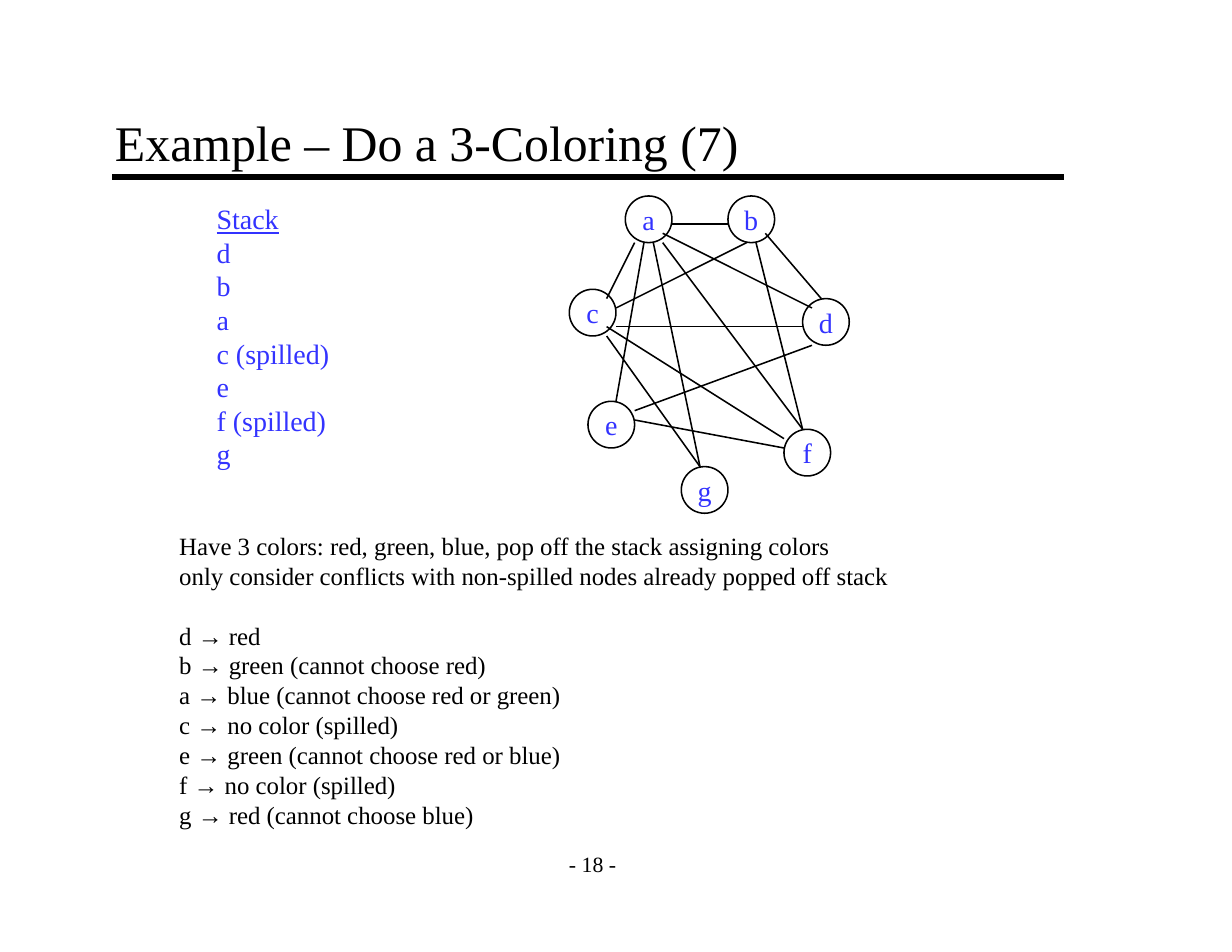
from lxml import etree
from pptx import Presentation
from pptx import util as u
from pptx.dml import color
from pptx.enum import shapes, text
from pptx.oxml import ns

STACK = ["Stack", "d", "b", "a", "c (spilled)", "e", "f (spilled)", "g"]
STRATEGY = [
    "Have 3 colors: red, green, blue, pop off the stack assigning colors",
    "only consider conflicts with non-spilled nodes already popped off stack",
]
ASSIGNMENTS = [
    "d → red",
    "b → green (cannot choose red)",
    "a → blue (cannot choose red or green)",
    "c → no color (spilled)",
    "e → green (cannot choose red or blue)",
    "f → no color (spilled)",
    "g → red (cannot choose blue)",
]

# Left and top of each node, and the ends of each edge, in grid steps
NODE_SIZE = 5
NODES = {
    "a": (67, 21), "g": (73, 50), "c": (61, 31), "f": (84, 46),
    "d": (86, 32), "b": (78, 21), "e": (63, 43),
}
EDGES = [
    (65, 32, 68, 26),  # c-a
    (66, 33, 80, 26),  # c-b
    (66, 35, 86, 35),  # c-d
    (65, 35, 84, 47),  # c-f
    (65, 36, 75, 50),  # c-g
    (72, 24, 78, 24),  # a-b
    (71, 25, 87, 33),  # a-d
    (71, 26, 86, 46),  # a-f
    (70, 26, 75, 50),  # a-g
    (69, 26, 66, 43),  # a-e
    (82, 25, 88, 32),  # b-d
    (81, 26, 86, 46),  # b-f
    (87, 37, 68, 44),  # d-e
    (68, 45, 84, 48),  # e-f
]


def rgb(value):
    return color.RGBColor.from_string(value)


def grid(*steps):
    """Turn grid steps, twelve to the inch, into lengths."""
    return [u.Cm(step * 2.54 / 12) for step in steps]


def assign(target, values):
    for name, value in values.items():
        setattr(target, name, value)


class SlideBuilder:
    font = "Times New Roman"
    black = "000000"
    blue = "3333FF"
    wide_insets = dict(
        margin_left=u.Cm(0.28), margin_right=u.Cm(0.28),
        margin_top=u.Cm(0.14), margin_bottom=u.Cm(0.14),
    )

    def __init__(self, slide):
        self.slide = slide

    def place(self, shape, box):
        assign(shape, dict(zip(("left", "top", "width", "height"), grid(*box))))

    def set_text(self, shape, lines, size, ink, frame, paragraph_format):
        text_frame = shape.text_frame
        text_frame.text = "\n".join(lines)
        assign(text_frame, dict(auto_size=text.MSO_AUTO_SIZE.NONE, **frame))
        for paragraph in text_frame.paragraphs:
            assign(paragraph, paragraph_format)
            for run in paragraph.runs:
                assign(run.font, dict(name=self.font, size=u.Pt(size)))
                run.font.color.rgb = rgb(ink)
        return text_frame.paragraphs

    def title(self, line, box):
        shape = self.slide.shapes.title
        self.place(shape, box)
        frame = dict(self.wide_insets, word_wrap=True,
                     vertical_anchor=text.MSO_ANCHOR.BOTTOM)
        self.set_text(shape, [line], 32, self.black, frame,
                      dict(alignment=text.PP_ALIGN.LEFT))

    def plain_list(self, index, lines, box, size, ink):
        """Fill a body placeholder with lines that have no bullets."""
        shape = self.slide.placeholders[index]
        self.place(shape, box)
        paragraphs = self.set_text(
            shape, lines, size, ink,
            dict(word_wrap=False, vertical_anchor=text.MSO_ANCHOR.TOP),
            dict(alignment=text.PP_ALIGN.LEFT, space_before=u.Pt(0),
                 line_spacing=u.Pt(1.2 * size)),
        )
        for paragraph in paragraphs:
            properties = paragraph._p.get_or_add_pPr()
            properties.set("marL", "0")
            properties.set("indent", "0")
            etree.SubElement(properties, ns.qn("a:buNone"))
        return paragraphs

    def page_number(self, line, box):
        shape = self.slide.shapes.add_textbox(*grid(*box))
        frame = dict(self.wide_insets, word_wrap=False,
                     vertical_anchor=text.MSO_ANCHOR.MIDDLE)
        self.set_text(shape, [line], 14, self.black, frame,
                      dict(alignment=text.PP_ALIGN.CENTER))

    def node(self, label, left, top):
        shape = self.slide.shapes.add_shape(
            shapes.MSO_SHAPE.OVAL, *grid(left, top, NODE_SIZE, NODE_SIZE))
        shape.shadow.inherit = False
        shape.fill.background()
        shape.line.color.rgb = rgb(self.black)
        shape.line.width = u.Pt(1)
        frame = dict(word_wrap=False, vertical_anchor=text.MSO_ANCHOR.MIDDLE)
        self.set_text(shape, [label], 18, self.blue, frame,
                      dict(alignment=text.PP_ALIGN.CENTER))

    def line(self, ends, width=1):
        connector = self.slide.shapes.add_connector(
            shapes.MSO_CONNECTOR.STRAIGHT, *grid(*ends))
        connector.line.color.rgb = rgb(self.black)
        connector.line.width = u.Pt(width)
        etree.SubElement(connector._element.spPr, ns.qn("a:effectLst"))


def main():
    presentation = Presentation()
    assign(presentation, dict(slide_width=u.Cm(27.94), slide_height=u.Cm(21.59)))
    two_content = presentation.slide_layouts[3]
    builder = SlideBuilder(presentation.slides.add_slide(two_content))

    builder.line((12, 19, 114, 19), width=4)
    builder.page_number("- 18 -", (59, 90, 9, 5))
    builder.title("Example – Do a 3-Coloring (7)", (11, 11, 102, 8))

    stack = builder.plain_list(1, STACK, (22, 21, 14.5, 30), 18, builder.blue)
    stack[0].runs[0].font.underline = True

    for label, (left, top) in NODES.items():
        builder.node(label, left, top)
    for ends in EDGES:
        builder.line(ends)

    steps = builder.plain_list(2, STRATEGY + ASSIGNMENTS,
                               (18, 56.25, 78.8, 33.25), 16, builder.black)
    steps[len(STRATEGY)].space_before = u.Pt(19.2)

    presentation.save("out.pptx")


if __name__ == "__main__":
    main()
